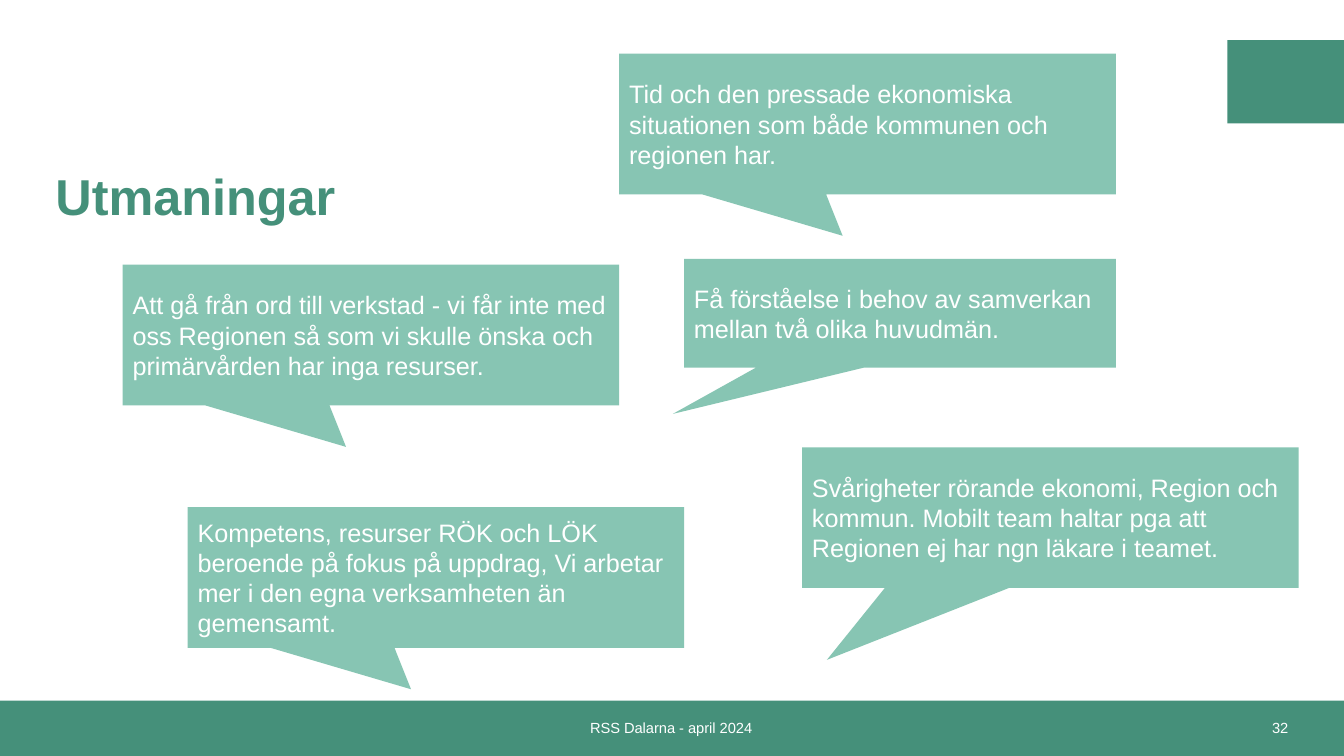
import pptx
import pptx.util
import pptx.dml.color
import pptx.enum.shapes
import pptx.enum.text

Pt = pptx.util.Pt
SHAPE = pptx.enum.shapes.MSO_SHAPE
ALIGN = pptx.enum.text.PP_ALIGN
GREEN, MINT, WHITE = "45907A", "87C5B3", "FFFFFF"


def add_block(kind, left, top, width, height, color):
    sp = s.shapes.add_shape(kind, Pt(left), Pt(top), Pt(width), Pt(height))
    sp.shadow.inherit = False
    sp.fill.solid()
    sp.fill.fore_color.rgb = pptx.dml.color.RGBColor.from_string(color)
    sp.line.fill.background()
    return sp


def set_text(sp, text, size, color, align, bold=False):
    tf = sp.text_frame
    tf.text = text
    tf.word_wrap = True
    tf.auto_size = pptx.enum.text.MSO_AUTO_SIZE.NONE
    tf.vertical_anchor = pptx.enum.text.MSO_ANCHOR.MIDDLE
    p = tf.paragraphs[0]
    p.alignment = align
    font = p.runs[0].font
    font.name = "Arial"
    font.size = Pt(size)
    font.bold = bold
    font.color.rgb = pptx.dml.color.RGBColor.from_string(color)


prs = pptx.Presentation()
prs.slide_width, prs.slide_height = Pt(960), Pt(540)
s = prs.slides.add_slide(prs.slide_layouts[5])

# Footer band and corner block
add_block(SHAPE.RECTANGLE, 0, 500.4, 960, 39.6, GREEN)
add_block(SHAPE.RECTANGLE, 876.7, 28.6, 83.3, 59.6, GREEN)

# Footer text and slide number
for text, left, width, align in [
    ("RSS Dalarna - april 2024", 281.5, 396, ALIGN.CENTER),
    ("32", 711.4, 216, ALIGN.RIGHT),
]:
    sp = s.shapes.add_textbox(Pt(left), Pt(500.4), Pt(width), Pt(39))
    set_text(sp, text, 10.5, WHITE, align)

# Title
title = s.shapes.title
title.left, title.top, title.width, title.height = Pt(32.4), Pt(95), Pt(820), Pt(95)
set_text(title, "Utmaningar", 36, GREEN, ALIGN.LEFT, bold=True)
title.text_frame.paragraphs[0].line_spacing = 0.9

# Speech bubbles: left, top, width, height, pointer tip, text
wide, tall = 354.7, 100.5
tip = (-0.05, 0.795)
bubbles = [
    (87.6, 189.1, wide, tall, tip,
     "Att gå från ord till verkstad - vi får inte med oss Regionen så som vi "
     "skulle önska och primärvården har inga resurser."),
    (134, 362.2, wide, tall, tip,
     "Kompetens, resurser RÖK och LÖK beroende på fokus på uppdrag, Vi arbetar "
     "mer i den egna verksamheten än gemensamt."),
    (572.9, 319.5, wide, tall, (-0.45, 1.011),
     "Svårigheter rörande ekonomi, Region och kommun. Mobilt team haltar pga att "
     "Regionen ej har ngn läkare i teamet."),
    (488.6, 185, 308.5, 77.6, (-0.526, 0.926),
     "Få förståelse i behov av samverkan mellan två olika huvudmän."),
    (442.3, 38.3, wide, tall, tip,
     "Tid och den pressade ekonomiska situationen som både kommunen och "
     "regionen har."),
]
for left, top, width, height, (tip_x, tip_y), text in bubbles:
    sp = add_block(SHAPE.RECTANGULAR_CALLOUT, left, top, width, height, MINT)
    sp.adjustments[0], sp.adjustments[1] = tip_x, tip_y
    set_text(sp, text, 18, WHITE, ALIGN.LEFT)

prs.save("out.pptx")
